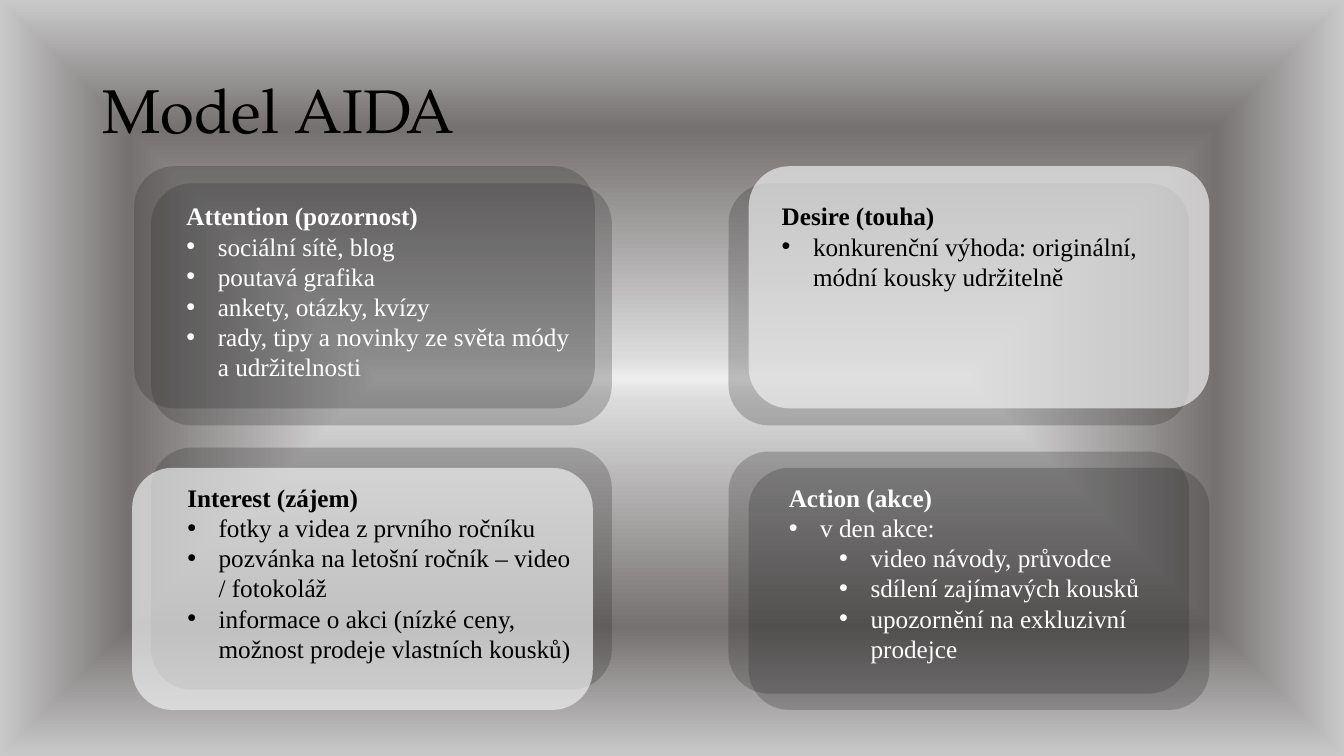
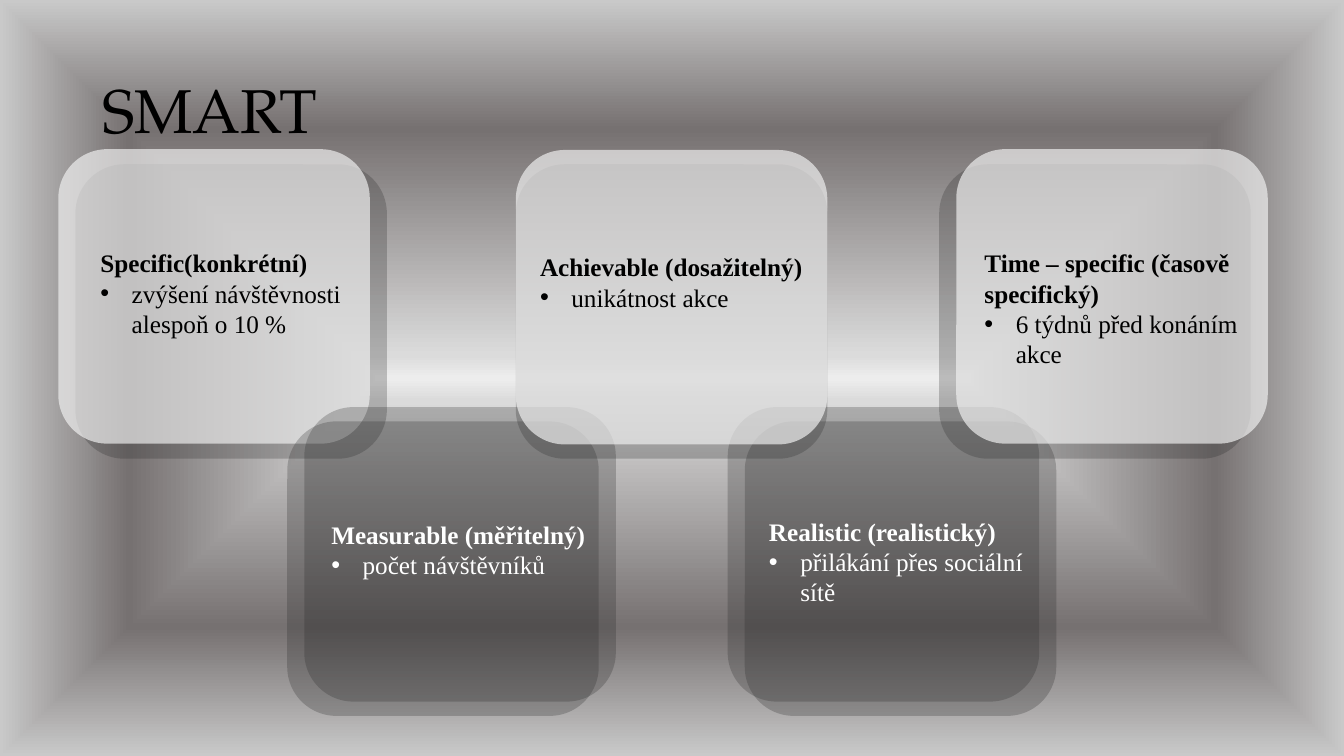
import pptx
import pptx.dml.color
import pptx.enum.shapes
import pptx.enum.text
import pptx.oxml
import pptx.oxml.ns
import pptx.util
from lxml import etree

Cm = pptx.util.Cm
qn = pptx.oxml.ns.qn
DARK, LIGHT, BLACK, WHITE = "262626", "F2F2F2", "000000", "FFFFFF"
OPACITY = {DARK: 25, LIGHT: 67}
INK = {DARK: WHITE, LIGHT: BLACK}
TITLE_FONT, BODY_FONT = "TeX Gyre Pagella", "Times New Roman"
TITLE_BOX = (2.33, 1.01, 29.21, 3.68)
STOPS = [(0, "EDEDED"), (6, "DBDBDB"), (66, "767171"), (100, "C9C9C9")]
HANG = 0.79
LEVEL_INDENT = 1.27


def rgb(value):
    """Return a colour from a hex string."""
    return pptx.dml.color.RGBColor.from_string(value)


def paint_background(master):
    """Give the master a gradient that runs from the centre to the edges."""
    fill = master.background.fill
    fill.solid()
    solid = master.element.find(".//" + qn("p:bgPr")).find(qn("a:solidFill"))
    stops = "".join(
        f'<a:gs pos="{pos * 1000}"><a:srgbClr val="{color}"/></a:gs>' for pos, color in STOPS)
    grad = pptx.oxml.parse_xml(
        f'<a:gradFill {pptx.oxml.ns.nsdecls("a")} rotWithShape="1"><a:gsLst>{stops}</a:gsLst>'
        '<a:path path="shape"><a:fillToRect l="50000" t="50000" r="50000" b="50000"/></a:path>'
        '</a:gradFill>')
    solid.getparent().replace(solid, grad)


def add_text(p, text, size=18, font=BODY_FONT, color=BLACK, bold=False, level=None):
    """Write one run into a paragraph, with a bullet when a level is given."""
    if level is not None:
        p.level = level
        pPr = p._p.get_or_add_pPr()
        pPr.set("marL", str(Cm(HANG + level * LEVEL_INDENT)))
        pPr.set("indent", str(-Cm(HANG)))
        etree.SubElement(pPr, qn("a:buFont")).set("typeface", "Arial")
        etree.SubElement(pPr, qn("a:buChar")).set("char", "•")
    r = p.add_run()
    r.text = text
    r.font.size = pptx.util.Pt(size)
    r.font.name = font
    r.font.bold = bold
    r.font.color.rgb = rgb(color)


def add_box(s, x, y, w, h):
    """Add a wrapping text box and return its text frame."""
    tf = s.shapes.add_textbox(Cm(x), Cm(y), Cm(w), Cm(h)).text_frame
    tf.word_wrap = True
    return tf


def add_title(s, text):
    """Write the slide title."""
    tf = add_box(s, *TITLE_BOX)
    tf.vertical_anchor = pptx.enum.text.MSO_ANCHOR.MIDDLE
    p = tf.paragraphs[0]
    p.line_spacing = 0.9
    add_text(p, text, size=44, font=TITLE_FONT)


def add_panel(s, x, y, w, h, color):
    """Draw a translucent rounded panel."""
    sp = s.shapes.add_shape(
        pptx.enum.shapes.MSO_SHAPE.ROUNDED_RECTANGLE, Cm(x), Cm(y), Cm(w), Cm(h))
    sp.shadow.inherit = False
    sp.line.fill.background()
    sp.fill.solid()
    sp.fill.fore_color.rgb = rgb(color)
    clr = sp.fill._xPr.find(".//" + qn("a:srgbClr"))
    etree.SubElement(clr, qn("a:alpha")).set("val", str(OPACITY[color] * 1000))


def add_card(s, x, y, w, h, shift, color, pad, text_w, heading, items):
    """Draw a panel, a shifted panel over it, and a headed list."""
    left, top = x + shift[0], y + shift[1]
    add_panel(s, x, y, w, h, DARK)
    add_panel(s, left, top, w, h, color)
    tf = add_box(s, left + pad[0], top + pad[1], text_w, h - pad[1])
    add_text(tf.paragraphs[0], heading, color=INK[color], bold=True)
    for level, text in items:
        add_text(tf.add_paragraph(), text, color=INK[color], level=level)


def build_slide(prs, title, size, cards):
    """Add a slide with a title and cards of one size."""
    s = prs.slides.add_slide(prs.slide_layouts[6])
    add_title(s, title)
    for x, y, *rest in cards:
        add_card(s, x, y, *size, *rest)


AIDA = [
    (3.81, 4.62, (-0.43, -0.43), DARK, (1.07, 0.74), 10.21, "Attention (pozornost)", [
        (0, "sociální sítě, blog"),
        (0, "poutavá grafika"),
        (0, "ankety, otázky, kvízy"),
        (0, "rady, tipy a novinky ze světa módy a udržitelnosti")]),
    (18.36, 4.62, (0.51, -0.43), LIGHT, (0.58, 0.74), 9.78, "Desire (touha)", [
        (0, "konkurenční výhoda: originální, módní kousky udržitelně")]),
    (3.81, 11.28, (-0.48, 0.51), LIGHT, (1.14, 0.23), 10.26, "Interest (zájem)", [
        (0, "fotky a videa z prvního ročníku"),
        (0, "pozvánka na letošní ročník – video / fotokoláž"),
        (0, "informace o akci (nízké ceny, možnost prodeje vlastních kousků)")]),
    (18.36, 11.38, (0.51, 0.41), DARK, (0.76, 0.23), 9.78, "Action (akce)", [
        (0, "v den akce:"),
        (1, "video návody, průvodce"),
        (1, "sdílení zajímavých kousků"),
        (1, "upozornění na exkluzivní prodejce")]),
]

UPPER, LOWER = 4.14, 10.26
SMART = [
    (1.9, UPPER, (-0.43, -0.38), LIGHT, (0.81, 2.36), 7.06, "Specific(konkrétní)", [
        (0, "zvýšení návštěvnosti alespoň o 10 %")]),
    (7.67, LOWER, (-0.43, 0.36), DARK, (0.86, 2.34), 7.06, "Measurable (měřitelný)", [
        (0, "počet návštěvníků")]),
    (18.34, LOWER, (0.43, 0.36), DARK, (0.36, 2.26), 7.06, "Realistic (realistický)", [
        (0, "přilákání přes sociální sítě")]),
    (23.67, UPPER, (0.43, -0.38), LIGHT, (0.46, 2.36), 7.06,
     "Time – specific (časově specifický)", [(0, "6 týdnů před konáním akce")]),
    (13, UPPER, (0, -0.36), LIGHT, (0.36, 2.44), 7.3, "Achievable (dosažitelný)", [
        (0, "unikátnost akce")]),
]


def main():
    """Build and save the presentation."""
    prs = pptx.Presentation()
    prs.slide_width, prs.slide_height = Cm(33.87), Cm(19.05)
    paint_background(prs.slide_master)
    build_slide(prs, "Model AIDA", (11.61, 6.1), AIDA)
    build_slide(prs, "SMART", (7.85, 7.42), SMART)
    prs.save("out.pptx")


if __name__ == "__main__":
    main()
